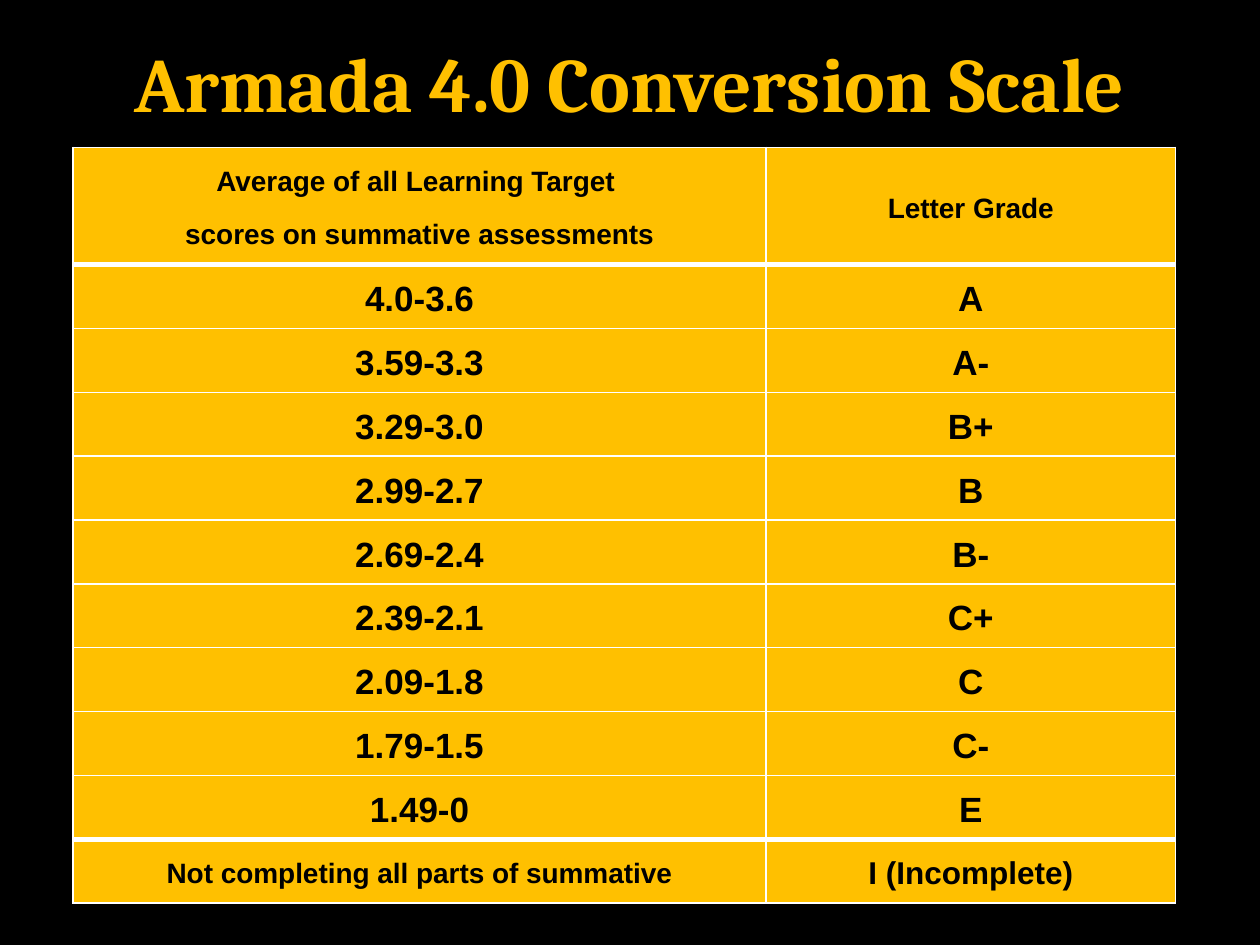
"""Build the grade conversion scale slide."""
from dataclasses import dataclass

from lxml import etree
from pptx import Presentation
from pptx.dml.color import RGBColor
from pptx.enum.text import MSO_ANCHOR, PP_ALIGN
from pptx.oxml.ns import qn
from pptx.table import _Cell
from pptx.text.text import TextFrame
from pptx.util import Inches, Pt

CENTER = PP_ALIGN.CENTER
MIDDLE = MSO_ANCHOR.MIDDLE


@dataclass(frozen=True)
class Theme:
    black: str = "000000"
    gold: str = "FFC000"
    white: str = "FFFFFF"
    title_font: str = "Cambria"
    table_font: str = "Arial"
    title_size: int = 44
    grade_size: int = 20
    incomplete_size: int = 18
    label_size: int = 16
    thin: int = 1
    thick: int = 3


@dataclass(frozen=True)
class GradeRow:
    scores: str
    grade: str
    scores_size: int
    grade_size: int


THEME = Theme()
GRADES = [
    ("4.0-3.6", "A"), ("3.59-3.3", "A-"), ("3.29-3.0", "B+"),
    ("2.99-2.7", "B"), ("2.69-2.4", "B-"), ("2.39-2.1", "C+"),
    ("2.09-1.8", "C"), ("1.79-1.5", "C-"), ("1.49-0", "E"),
]
ROWS = [
    GradeRow("Average of all Learning Target \nscores on summative assessments",
             "Letter Grade", THEME.label_size, THEME.label_size),
    *(GradeRow(scores, grade, THEME.grade_size, THEME.grade_size)
      for scores, grade in GRADES),
    GradeRow("Not completing all parts of summative", "I (Incomplete)",
             THEME.label_size, THEME.incomplete_size),
]
COLUMN_WIDTHS = (5.5, 3.25)
TABLE_HEIGHT = 6
HEADER_HEIGHT = 0.93


def write_text(frame: TextFrame, text: str, *, font: str, size: int, color: str,
               line_spacing: float = 1.0, space_after: int = 0) -> None:
    """Write bold centred text, one paragraph for each line."""
    for index, line in enumerate(text.split("\n")):
        para = frame.add_paragraph() if index else frame.paragraphs[0]
        para.alignment = CENTER
        para.line_spacing = line_spacing
        para.space_after = Pt(space_after)
        span = para.add_run()
        span.text = line
        span.font.name = font
        span.font.size = Pt(size)
        span.font.bold = True
        span.font.color.rgb = RGBColor.from_string(color)


def draw_borders(cell: _Cell, top: int, bottom: int) -> None:
    """Draw the four white cell borders, with widths in points."""
    properties = cell._tc.get_or_add_tcPr()
    widths = {"a:lnL": THEME.thin, "a:lnR": THEME.thin, "a:lnT": top, "a:lnB": bottom}
    for index, (tag, width) in enumerate(widths.items()):
        line = etree.Element(qn(tag), w=str(Pt(width)))
        fill = etree.SubElement(line, qn("a:solidFill"))
        etree.SubElement(fill, qn("a:srgbClr"), val=THEME.white)
        properties.insert(index, line)


def draw_cell(cell: _Cell, text: str, size: int, top: int, bottom: int) -> None:
    """Fill, write and border one table cell."""
    cell.fill.solid()
    cell.fill.fore_color.rgb = RGBColor.from_string(THEME.gold)
    cell.vertical_anchor = MIDDLE
    cell.margin_left = cell.margin_right = Inches(0.07)
    cell.margin_top = cell.margin_bottom = Inches(0)
    write_text(cell.text_frame, text, font=THEME.table_font, size=size,
               color=THEME.black, line_spacing=1.15, space_after=10)
    draw_borders(cell, top, bottom)


def main() -> None:
    """Create and save the slide."""
    deck = Presentation()
    deck.slide_width, deck.slide_height = Inches(10), Inches(7.5)
    page = deck.slides.add_slide(deck.slide_layouts[6])
    page.background.fill.solid()
    page.background.fill.fore_color.rgb = RGBColor.from_string(THEME.black)

    title = page.shapes.add_textbox(Inches(0.5), Inches(0.3), Inches(9), Inches(0.7))
    title.text_frame.word_wrap = True
    title.text_frame.vertical_anchor = MIDDLE
    write_text(title.text_frame, "Armada 4.0 Conversion Scale", font=THEME.title_font,
               size=THEME.title_size, color=THEME.gold)

    table = page.shapes.add_table(
        len(ROWS), len(COLUMN_WIDTHS), Inches(0.58), Inches(1.17),
        Inches(sum(COLUMN_WIDTHS)), Inches(TABLE_HEIGHT)).table
    for column, width in zip(table.columns, COLUMN_WIDTHS):
        column.width = Inches(width)
    last = len(ROWS) - 1
    row_height = (TABLE_HEIGHT - HEADER_HEIGHT) / last
    for index, row in enumerate(ROWS):
        table.rows[index].height = Inches(row_height if index else HEADER_HEIGHT)
        top = THEME.thick if index in (1, last) else THEME.thin
        bottom = THEME.thick if index in (0, last - 1) else THEME.thin
        draw_cell(table.cell(index, 0), row.scores, row.scores_size, top, bottom)
        draw_cell(table.cell(index, 1), row.grade, row.grade_size, top, bottom)

    deck.save("out.pptx")


if __name__ == "__main__":
    main()
